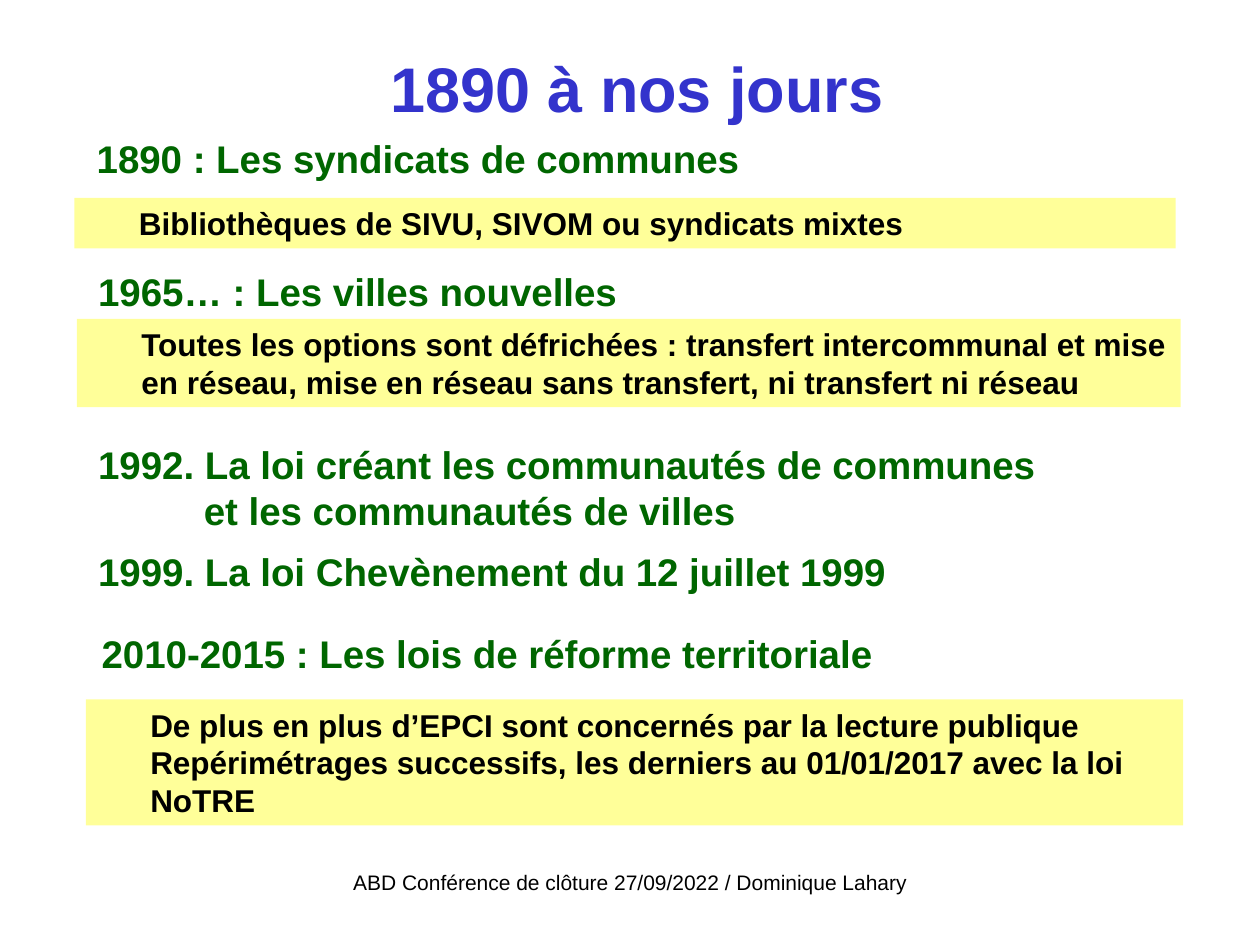
from pptx import Presentation
from pptx.dml.color import RGBColor
from pptx.enum.shapes import MSO_SHAPE as Shape
from pptx.enum.text import MSO_ANCHOR as Anchor, PP_ALIGN as Align
from pptx.util import Cm, Pt

GREEN, BLUE, YELLOW, BLACK = "006600", "3333CC", "FFFF99", "000000"
HANGING = Cm(2.13)


def color(value):
    return RGBColor.from_string(value)


def write(shape, lines, size, ink, bold=True, align=Align.LEFT, anchor=Anchor.TOP, gap=0):
    frame = shape.text_frame
    frame.word_wrap = True
    frame.vertical_anchor = anchor
    for index, line in enumerate(lines):
        paragraph = frame.add_paragraph() if index else frame.paragraphs[0]
        paragraph.text = line
        paragraph.alignment = align
        if index:
            paragraph.space_before = Pt(gap)
        font = paragraph.font
        font.name, font.size, font.bold = "Arial", Pt(size), bold
        font.color.rgb = color(ink)
    return frame


def add_text(slide, box, lines, size, ink, **options):
    shape = slide.shapes.add_textbox(*map(Cm, box))
    return write(shape, lines, size, ink, **options)


def add_heading(slide, box, *lines):
    frame = add_text(slide, box, lines, 22, GREEN, gap=8.5)
    for paragraph in frame.paragraphs:
        if "\v" in paragraph.text:
            properties = paragraph._p.get_or_add_pPr()
            properties.set("marL", str(HANGING))
            properties.set("indent", str(-HANGING))


def add_note(slide, box, *lines):
    shape = slide.shapes.add_shape(Shape.RECTANGLE, *map(Cm, box))
    shape.shadow.inherit = False
    shape.fill.solid()
    shape.fill.fore_color.rgb = color(YELLOW)
    shape.line.fill.background()
    write(shape, lines, 18, BLACK).margin_left = Cm(1.3)


def build_slide(presentation):
    slide = presentation.slides.add_slide(presentation.slide_layouts[6])
    add_text(slide, (1.09, 0, 23.5, 3.53), ["1890 à nos jours"], 36, BLUE,
             align=Align.CENTER, anchor=Anchor.MIDDLE)

    add_heading(slide, (1.7, 2.59, 22, 1.19), "1890 : Les syndicats de communes")
    add_note(slide, (1.5, 3.99, 22.2, 1.02),
             "Bibliothèques de SIVU, SIVOM ou syndicats mixtes")

    add_heading(slide, (1.73, 5.28, 22.6, 1.19), "1965… : Les villes nouvelles")
    add_note(slide, (1.55, 6.43, 22.25, 1.78),
             "Toutes les options sont défrichées : transfert intercommunal et mise "
             "en réseau, mise en réseau sans transfert, ni transfert ni réseau")

    add_heading(slide, (1.73, 8.76, 22, 3.35),
                "1992. La loi créant les communautés de communes\v"
                "et les communautés de villes",
                "1999. La loi Chevènement du 12 juillet 1999")

    add_heading(slide, (1.8, 12.57, 21.8, 1.19),
                "2010-2015 : Les lois de réforme territoriale")
    add_note(slide, (1.73, 14.1, 22.12, 2.54),
             "De plus en plus d’EPCI sont concernés par la lecture publique",
             "Repérimétrages successifs, les derniers au 01/01/2017 avec la loi NoTRE")

    add_text(slide, (0.86, 17.4, 23.7, 1.27),
             ["ABD Conférence de clôture 27/09/2022 / Dominique Lahary"], 12, BLACK,
             bold=False, align=Align.CENTER)


def main():
    presentation = Presentation()
    presentation.slide_width, presentation.slide_height = Cm(25.4), Cm(19.05)
    build_slide(presentation)
    presentation.save("out.pptx")


if __name__ == "__main__":
    main()
